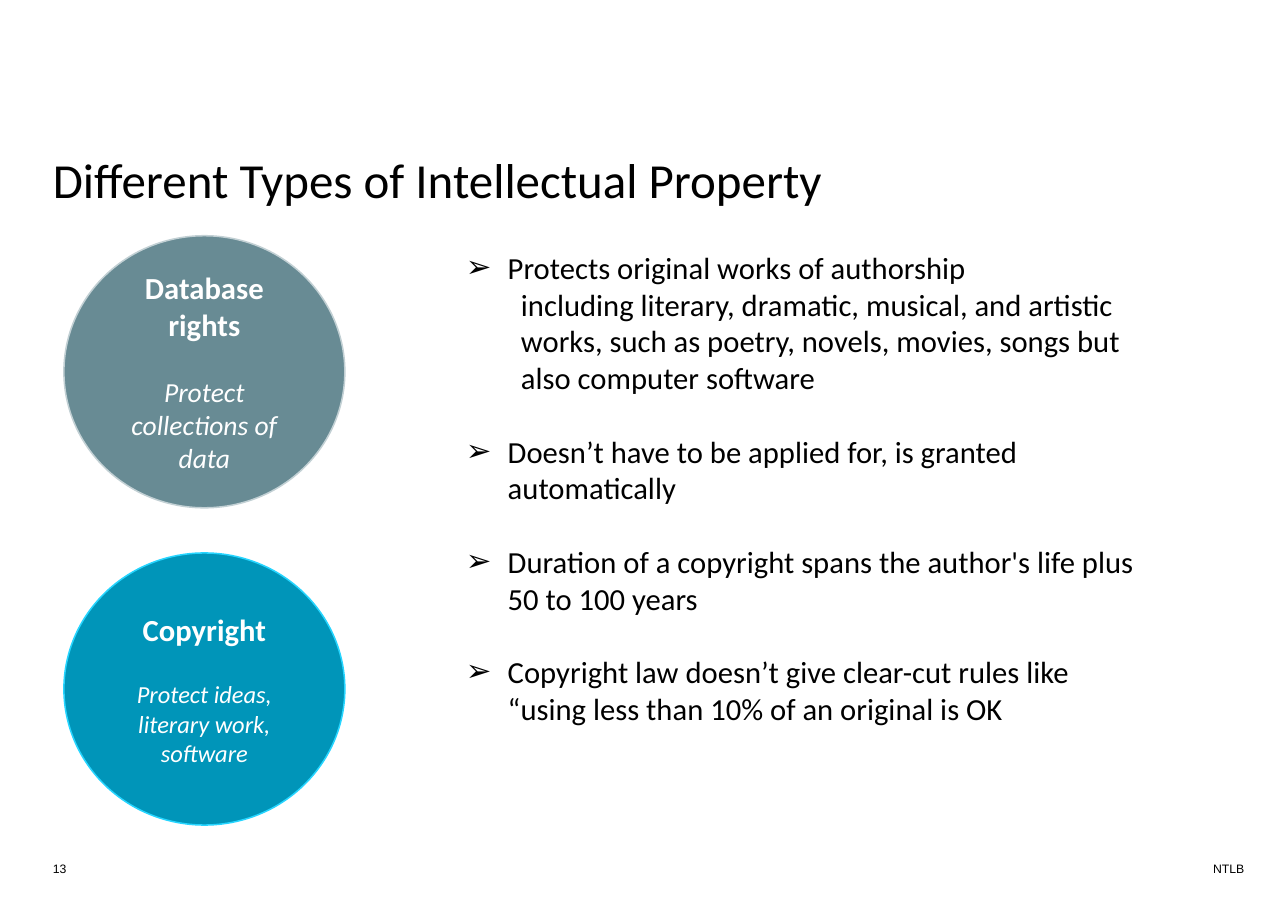
from pptx import Presentation
from pptx.dml.color import RGBColor as Rgb
from pptx.enum.shapes import MSO_SHAPE as Shape
from pptx.enum.text import MSO_ANCHOR as Anchor, PP_ALIGN as Align
from pptx.oxml.ns import qn
from pptx.util import Inches, Pt
from lxml.etree import SubElement as Sub

HEX = {"black": "000000", "white": "FFFFFF", "slate": "688B94",
       "mist": "C2D0D4", "blue": "0095B9", "sky": "26D5FF"}
TITLE = "Different Types of Intellectual Property"
FOOT = [("13", 0.48, 1.35), ("NTLB", 11.01, 0.51)]
RIGHTS = [
    (["Database", "rights"], "Protect collections of data", 18, "slate", "mist"),
    (["Copyright"], "Protect ideas, literary work, software", 16, "blue", "sky"),
]
POINTS = [
    ("Protects original works of authorship", True),
    ("including literary, dramatic, musical, and artistic works, such as "
     "poetry, novels, movies, songs but also computer software", False),
    ("Doesn’t have to be applied for, is granted automatically", True),
    ("Duration of a copyright\u00a0spans the author's life plus 50 to 100 years"
     .replace("\u00a0", " "), True),
    ("Copyright law doesn’t give clear-cut rules like "
     "“using less than 10% of an original is OK", True),
]
LEFT, TOP, WIDE, HIGH, STEP = 0.58, 2.14, 2.55, 2.47, 2.88


def style(para, size, color="black", face="Calibri", bold=False, italic=False):
    for run in para.runs:
        font = run.font
        font.name, font.size = face, Pt(size)
        font.bold, font.italic = bold, italic
        font.color.rgb = Rgb.from_string(HEX[color])


def add_text(slide, place, text, pad=True):
    frame = slide.shapes.add_textbox(*map(Inches, place)).text_frame
    frame.word_wrap = True
    if not pad:
        frame.margin_left = frame.margin_right = 0
        frame.margin_top = frame.margin_bottom = 0
    frame.text = text
    return frame


def add_right(slide, row, right):
    names, note, size, fill, line = right
    place = LEFT, TOP + row * STEP, WIDE, HIGH
    oval = slide.shapes.add_shape(Shape.OVAL, *map(Inches, place))
    oval.shadow.inherit = False
    oval.fill.solid()
    oval.fill.fore_color.rgb = Rgb.from_string(HEX[fill])
    oval.line.color.rgb = Rgb.from_string(HEX[line])
    oval.line.width = Pt(1)
    frame = oval.text_frame
    frame.vertical_anchor = Anchor.MIDDLE
    frame.text = "\n".join(names + [note])
    *heads, last = frame.paragraphs
    for para in heads:
        style(para, 20, "white", bold=True)
    style(last, size, "white", italic=True)
    last.space_before = Pt(21)
    for para in frame.paragraphs:
        para.alignment = Align.CENTER


def add_points(slide):
    text = "\n".join(text for text, mark in POINTS)
    frame = add_text(slide, (4.13, 2.21, 6.38, 4.48), text)
    for row, (para, (text, mark)) in enumerate(zip(frame.paragraphs, POINTS)):
        props = para._p.get_or_add_pPr()
        props.set("marL", str(Inches(0.38 if mark else 0.5)))
        props.set("indent", str(Inches(-0.38 if mark else 0)))
        if mark:
            Sub(props, qn("a:buFont")).set("typeface", "Arial")
            Sub(props, qn("a:buChar")).set("char", "➢")
            if row:
                para.space_before = Pt(24)
        style(para, 20)


def main():
    """Build the slide on types of intellectual property."""
    deck = Presentation()
    deck.slide_width, deck.slide_height = Inches(11.69), Inches(8.27)
    slide = deck.slides.add_slide(deck.slide_layouts[6])
    title = add_text(slide, (0.48, 1.42, 10.4, 0.95), TITLE, False).paragraphs[0]
    title.line_spacing = 0.9
    style(title, 32)
    for row, right in enumerate(RIGHTS):
        add_right(slide, row, right)
    add_points(slide)
    for text, left, wide in FOOT:
        frame = add_text(slide, (left, 7.77, wide, 0.23), text, False)
        frame.vertical_anchor = Anchor.MIDDLE
        style(frame.paragraphs[0], 8, face="Arial")
    deck.save("out.pptx")


if __name__ == "__main__":
    main()
